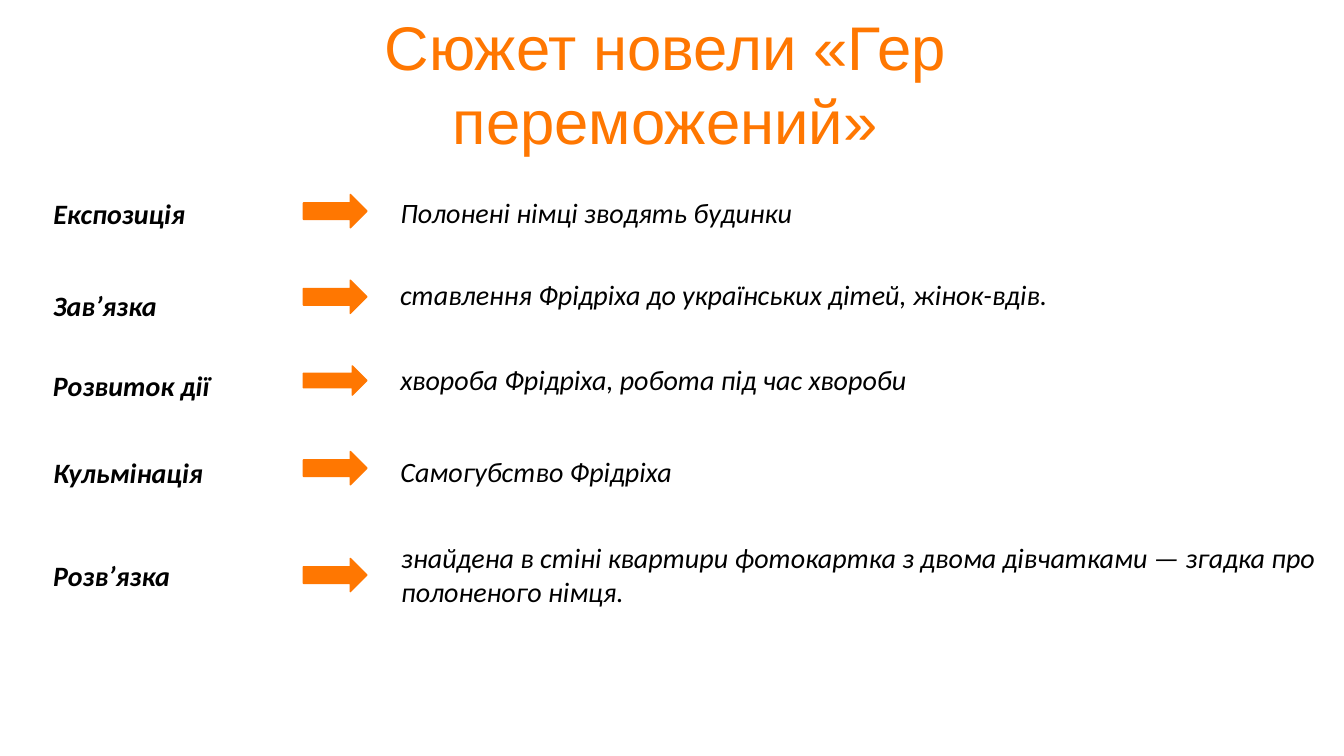
from pptx import Presentation
from pptx.dml.color import RGBColor
from pptx.enum.shapes import MSO_SHAPE as Preset
from pptx.enum.text import MSO_ANCHOR as Anchor, PP_ALIGN as Align
from pptx.util import Inches, Pt

ORANGE = RGBColor(0xFF, 0x77, 0x01)
BLACK = RGBColor(0x00, 0x00, 0x00)
WHITE = RGBColor(0xFF, 0xFF, 0xFF)

LABEL_LEFT, LABEL_WIDTH = 0.4, 2.37
ARROW_LEFT, ARROW_WIDTH = 3.01, 0.63
EVENT_LEFT, EVENT_WIDTH = 3.84, 9.48

# Stage, event, then (top, height) of the label, the arrow and the event
PLOT = [
    ("Експозиція", "Полонені німці зводять будинки",
     (1.8, 0.64), (1.93, 0.33), (1.77, 0.67), Align.JUSTIFY),
    ("Зав’язка", "ставлення Фрідріха до українських дітей, жінок-вдів.",
     (2.73, 0.59), (2.78, 0.33), (2.61, 0.61), Align.LEFT),
    ("Розвиток дії", "хвороба Фрідріха, робота під час хвороби",
     (3.54, 0.57), (3.63, 0.29), (3.43, 0.67), Align.JUSTIFY),
    ("Кульмінація", "Самогубство Фрідріха",
     (4.37, 0.64), (4.48, 0.33), (4.34, 0.67), Align.JUSTIFY),
    ("Розв’язка",
     "знайдена в стіні квартири фотокартка з двома дівчатками — "
     "згадка про полоненого німця.",
     (5.41, 0.59), (5.54, 0.33), (5.28, 0.84), Align.LEFT),
]


def write(box, text, font="Calibri", size=20, color=BLACK, bold=False,
          italic=False, align=Align.LEFT, anchor=Anchor.MIDDLE):
    frame = box.text_frame
    frame.word_wrap = True
    frame.vertical_anchor = anchor
    para = frame.paragraphs[0]
    para.alignment = align
    span = para.add_run()
    span.text = text
    span.font.name = font
    span.font.size = Pt(size)
    span.font.bold = bold
    span.font.italic = italic
    span.font.color.rgb = color


def add_filled(page, preset, left, top, width, height, fill):
    shape = page.shapes.add_shape(preset, Inches(left), Inches(top),
                                  Inches(width), Inches(height))
    shape.shadow.inherit = False
    shape.fill.solid()
    shape.fill.fore_color.rgb = fill
    shape.line.fill.background()
    return shape


def add_panel(page, text, left, top, width, height, **style):
    panel = add_filled(page, Preset.ROUNDED_RECTANGLE,
                       left, top, width, height, WHITE)
    write(panel, text, italic=True, **style)


def add_arrow(page, top, height):
    arrow = add_filled(page, Preset.RIGHT_ARROW,
                       ARROW_LEFT, top, ARROW_WIDTH, height, ORANGE)
    arrow.line.color.rgb = ORANGE
    arrow.line.width = Pt(1)


def add_title(page, text):
    box = page.shapes.add_textbox(Inches(1.72), Inches(0.04),
                                  Inches(9.76), Inches(0.84))
    write(box, text, font="Arial", size=44, color=ORANGE,
          align=Align.CENTER, anchor=Anchor.TOP)


def main():
    deck = Presentation()
    deck.slide_width, deck.slide_height = Inches(13.33), Inches(7.5)
    page = deck.slides.add_slide(deck.slide_layouts[6])
    add_title(page, "Cюжет новели «Гер переможений»")
    for stage, event, label_at, arrow_at, event_at, align in PLOT:
        label_top, label_height = label_at
        event_top, event_height = event_at
        add_panel(page, stage, LABEL_LEFT, label_top,
                  LABEL_WIDTH, label_height, bold=True)
        add_panel(page, event, EVENT_LEFT, event_top,
                  EVENT_WIDTH, event_height, align=align)
        add_arrow(page, *arrow_at)
    deck.save("out.pptx")


if __name__ == "__main__":
    main()
